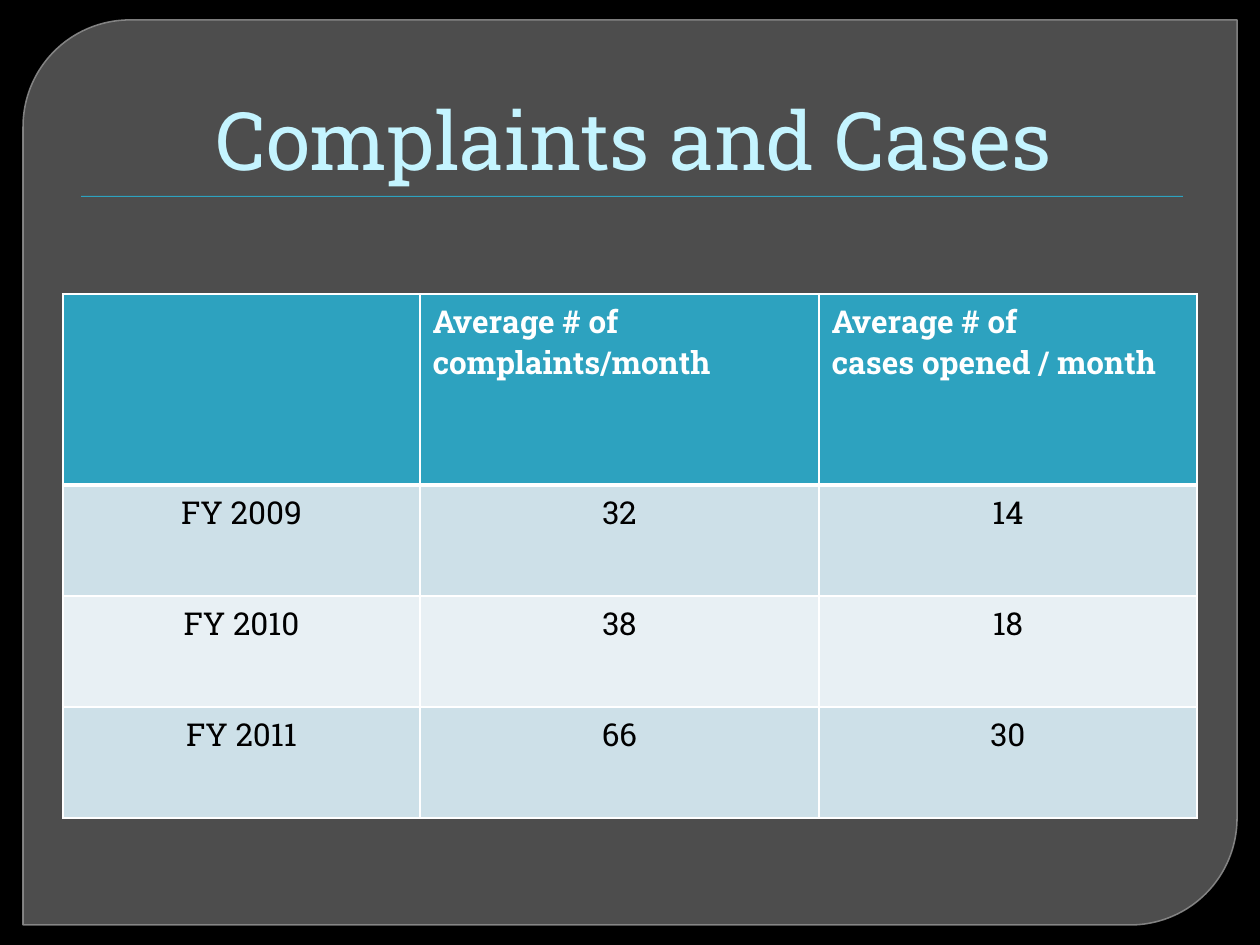
from lxml.etree import SubElement as Sub
from pptx import Presentation
from pptx.dml.color import RGBColor
from pptx.enum.shapes import MSO_SHAPE as Kind
from pptx.enum.text import MSO_ANCHOR as Anchor, PP_ALIGN as Align
from pptx.oxml.ns import qn
from pptx.util import Pt

SCALE = 914400 / 126
FONT = "Roboto Slab"
TEAL, WHITE, BLACK = "2DA2BF", "FFFFFF", "000000"
BANDS = ["CDE0E8", "E8F0F4"]
HEAD = ["", "Average # of complaints/month", "Average # of\ncases opened / month"]
ROWS = [["FY 2009", "32", "14"], ["FY 2010", "38", "18"], ["FY 2011", "66", "30"]]


def px(*nums):
    """Turn px lengths into EMU."""
    return [round(n * SCALE) for n in nums]


def rgb(code):
    return RGBColor.from_string(code)


def paint(fill, code):
    fill.solid()
    fill.fore_color.rgb = rgb(code)


def fade(fill, percent):
    """Set the opacity of a solid fill."""
    color = fill._xPr.find(qn("a:solidFill"))[0]
    Sub(color, qn("a:alpha"), val=str(percent * 1000))


def write(frame, text, align, **style):
    frame.text = text
    for para in frame.paragraphs:
        para.alignment = align
        para.font.color.rgb = rgb(style["color"])
        for key, val in {"name": FONT, "size": Pt(style["size"]),
                         "bold": style.get("bold", False)}.items():
            setattr(para.font, key, val)


def edge(cell, sides):
    """Draw white borders, given as side and width in points."""
    props = cell._tc.get_or_add_tcPr()
    for side, width in sides.items():
        line = Sub(props, qn(f"a:ln{side}"), w=str(Pt(width)))
        Sub(Sub(line, qn("a:solidFill")), qn("a:srgbClr"), val=WHITE)


def add_panel(slide, box):
    panel = slide.shapes.add_shape(Kind.ROUND_2_DIAG_RECTANGLE, *px(*box))
    panel.shadow.inherit = False
    panel.adjustments[0], panel.adjustments[1] = 0.118, 0
    paint(panel.fill, "777777")
    fade(panel.fill, 65)
    paint(panel.line.fill, "8E8E8E")
    fade(panel.line.fill, 88)
    panel.line.width = Pt(0.87)


def add_title(slide, box):
    """Place the heading, with a thin rule below it."""
    left, top, width, height = box
    rule = slide.shapes.add_shape(
        Kind.RECTANGLE, *px(left + 18, top + height + 3, width - 32, 1))
    rule.shadow.inherit = False
    paint(rule.fill, TEAL)
    rule.line.fill.background()
    glow = Sub(rule._element.spPr.find(qn("a:effectLst")), qn("a:outerShdw"),
               blurRad=str(Pt(1)), dist=str(Pt(1)), dir="5400000")
    Sub(Sub(glow, qn("a:srgbClr"), val=BLACK), qn("a:alpha"), val="75000")

    frame = slide.shapes.add_textbox(*px(*box)).text_frame
    for key, val in {"word_wrap": True, "vertical_anchor": Anchor.BOTTOM,
                     "margin_left": px(20)[0]}.items():
        setattr(frame, key, val)
    write(frame, "Complaints and Cases", Align.CENTER, size=46, color="C4F4FF")


def add_grid(slide, box):
    data = [HEAD] + ROWS
    grid = slide.shapes.add_table(len(data), len(HEAD), *px(*box)).table
    for col, width in zip(grid.columns, px(357, 399, 378)):
        col.width = width
    for row, height in zip(grid.rows, px(191, 111, 111, 111)):
        row.height = height
    for r, texts in enumerate(data):
        top = r == 0
        back = TEAL if top else BANDS[(r - 1) % 2]
        for c, text in enumerate(texts):
            cell = grid.cell(r, c)
            edge(cell, {"L": 1, "R": 1, "T": 3 if r == 1 else 1, "B": 3 if top else 1})
            paint(cell.fill, back)
            write(cell.text_frame, text, Align.LEFT if top else Align.CENTER,
                  size=18, color=WHITE if top else BLACK, bold=top)


def main():
    deck = Presentation()
    deck.slide_width, deck.slide_height = px(1260, 945)
    slide = deck.slides.add_slide(deck.slide_layouts[6])
    paint(slide.background.fill, BLACK)
    add_panel(slide, (23, 20, 1214, 905))
    add_title(slide, (63, 35, 1134, 158))
    add_grid(slide, (63, 294, 1134, 524))
    deck.save("out.pptx")


if __name__ == "__main__":
    main()
